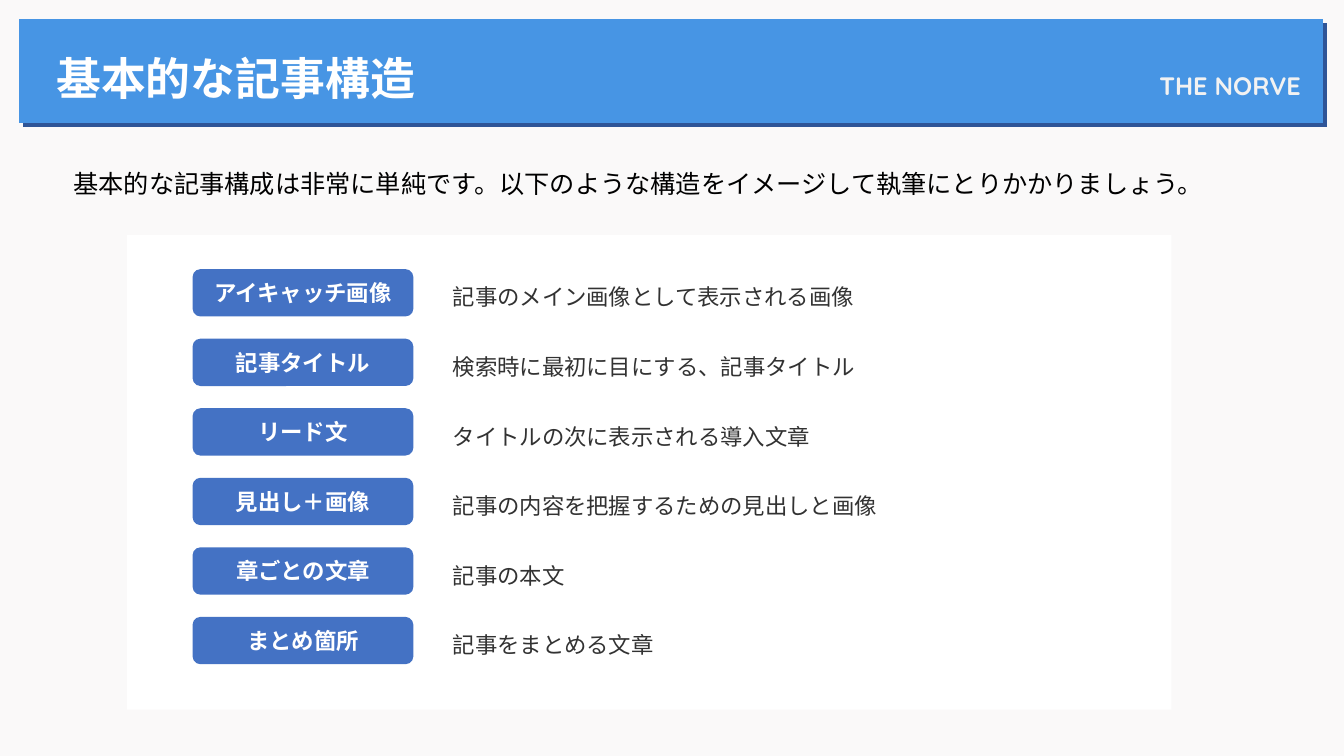
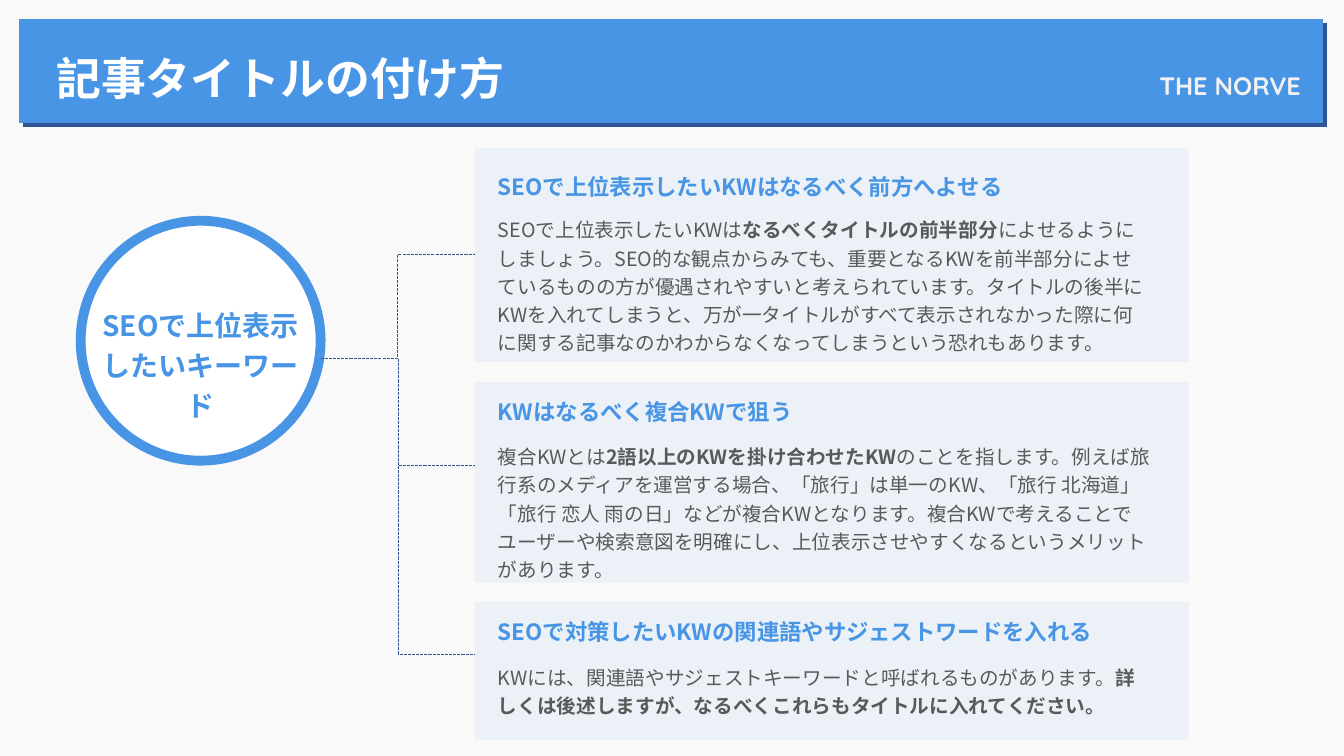
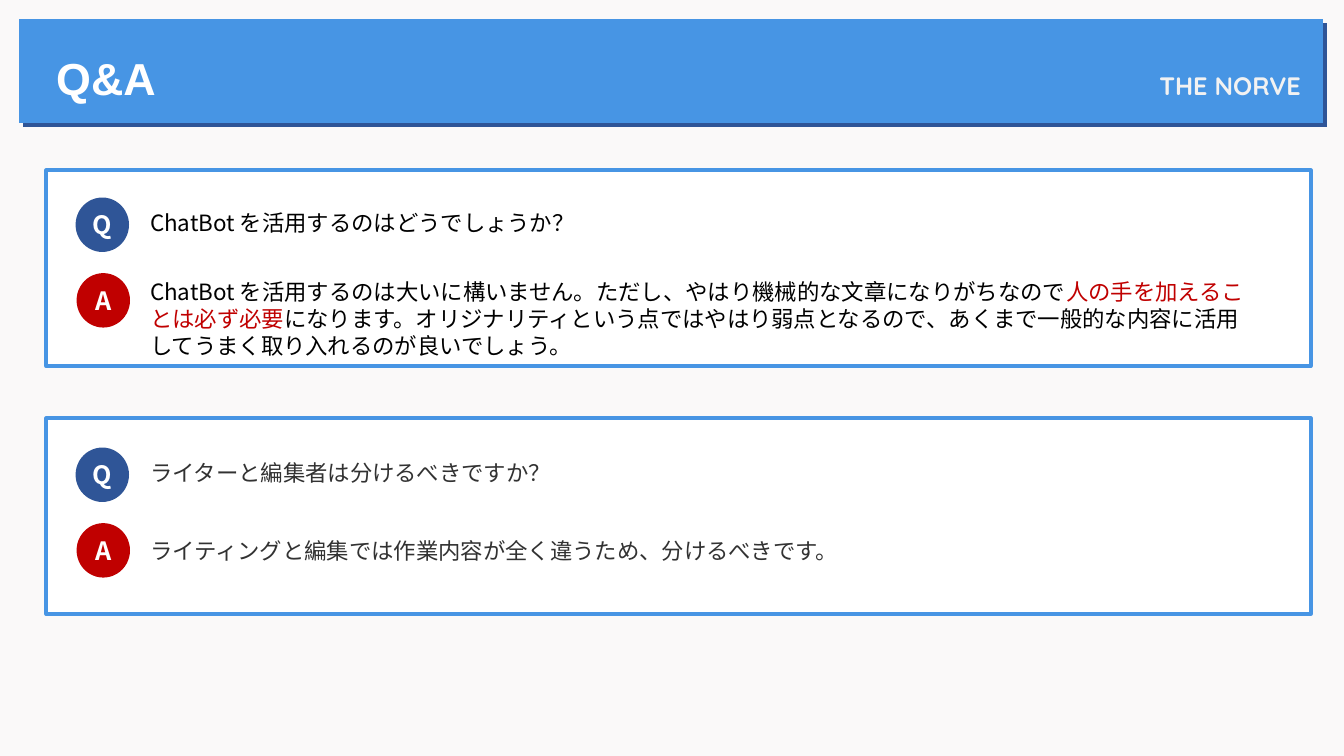
from lxml.etree import SubElement
from pptx import Presentation
from pptx.dml.color import RGBColor
from pptx.enum.dml import MSO_LINE
from pptx.enum.shapes import MSO_CONNECTOR, MSO_SHAPE
from pptx.enum.text import MSO_ANCHOR, MSO_AUTO_SIZE, PP_ALIGN
from pptx.oxml.ns import qn
from pptx.util import Pt

PX = 9144  # 100 px to the inch
FONT = "Noto Sans CJK JP"
BACKGROUND, WHITE, BLACK = "FAF9F9", "FFFFFF", "000000"
BLUE, NAVY, LABEL_BLUE, PALE_BLUE = "4795E4", "2F5597", "4472C4", "DEEBF7"
RED, DARK, GREY, LIGHT = "C00000", "323232", "595959", "F2F2F2"
BRAND = "THE NORVE"


def px(n):
    return int(n * PX)


def rgb(color):
    return RGBColor.from_string(color)


def write(sp, content, size=16, color=BLACK, bold=False, font=FONT,
          align=PP_ALIGN.LEFT, anchor=MSO_ANCHOR.TOP, spacing=None,
          inset=None, wrap=True):
    """Content is a string or a list of (text, overrides of color and bold)."""
    tf = sp.text_frame
    tf.word_wrap = wrap
    tf.vertical_anchor = anchor
    if inset is not None:
        tf.margin_left = tf.margin_right = px(inset)
        tf.margin_top = tf.margin_bottom = px(inset)
    p = tf.paragraphs[0]
    p.alignment = align
    if spacing:
        p.line_spacing = spacing
    runs = [(content, {})] if isinstance(content, str) else content
    for text, overrides in runs:
        r = p.add_run()
        r.text = text
        r.font.size = Pt(size)
        r.font.bold = overrides.get("bold", bold)
        r.font.color.rgb = rgb(overrides.get("color", color))
        r.font.name = font
        SubElement(r.font._element, qn("a:ea"), typeface=FONT)


def add_text(s, x, y, w, h, content, grow=True, **fmt):
    sp = s.shapes.add_textbox(px(x), px(y), px(w), px(h))
    write(sp, content, **fmt)
    if grow:
        sp.text_frame.auto_size = MSO_AUTO_SIZE.SHAPE_TO_FIT_TEXT


def add_box(s, x, y, w, h, fill, kind=MSO_SHAPE.RECTANGLE, line=None,
            line_width=0, opacity=None):
    sp = s.shapes.add_shape(kind, px(x), px(y), px(w), px(h))
    sp.shadow.inherit = False
    sp.fill.solid()
    sp.fill.fore_color.rgb = rgb(fill)
    if opacity is not None:
        clr = sp._element.spPr.find(".//" + qn("a:srgbClr"))
        SubElement(clr, qn("a:alpha"), val=str(opacity * 1000))
    if line:
        sp.line.color.rgb = rgb(line)
        sp.line.width = Pt(line_width)
    else:
        sp.line.fill.background()
    return sp


def add_label(s, x, y, w, h, text, fill, kind, size):
    sp = add_box(s, x, y, w, h, fill, kind)
    write(sp, text, size=size, color=WHITE, bold=True, inset=0, wrap=False,
          align=PP_ALIGN.CENTER, anchor=MSO_ANCHOR.MIDDLE)


def add_elbow(s, x1, y1, x2, y2, bend):
    """Dashed elbow that turns at bend percent of its width."""
    c = s.shapes.add_connector(MSO_CONNECTOR.ELBOW, px(x1), px(y1), px(x2), px(y2))
    c.line.color.rgb = rgb(NAVY)
    c.line.width = Pt(0.75)
    c.line.dash_style = MSO_LINE.SQUARE_DOT
    spPr = c._element.spPr
    SubElement(spPr, qn("a:effectLst"))
    guides = spPr.find(".//" + qn("a:avLst"))
    SubElement(guides, qn("a:gd"), name="adj1", fmla=f"val {bend * 1000}")


def add_slide(prs, title):
    s = prs.slides.add_slide(prs.slide_layouts[6])
    add_box(s, 23, 23, 1293, 103, NAVY)
    add_box(s, 19, 19, 1293, 103, BLUE)
    add_text(s, 787, 35, 513, 70, BRAND, grow=False, size=18, color=LIGHT,
             bold=True, font="Quicksand", align=PP_ALIGN.RIGHT,
             anchor=MSO_ANCHOR.BOTTOM, spacing=0.9)
    add_text(s, 46, 45, 596, 64, title, size=32, color=WHITE, bold=True, font="Arial")
    return s


def add_card(s, top, height, heading_top, body_top, heading, body):
    add_box(s, 471, top, 708, height, PALE_BLUE, opacity=50)
    add_text(s, 484, heading_top, 667, 37, heading, color=BLUE, bold=True)
    add_text(s, 484, body_top, 667, 63, body, size=14, color=GREY, spacing=1.2)


def add_qa(s, top, badge_top, answer_top, question, answer, color):
    add_box(s, 46, top, 1254, 194, WHITE, line=BLUE, line_width=3)
    add_label(s, 75, badge_top, 53, 54, "Q", NAVY, MSO_SHAPE.OVAL, 18)
    add_label(s, 76, badge_top + 75, 53, 54, "A", RED, MSO_SHAPE.OVAL, 18)
    add_text(s, 139, badge_top + 7, 667, 37, question, color=color)
    add_text(s, 139, answer_top, 1115, 37, answer, color=color)


def structure_slide(prs):
    s = add_slide(prs, "基本的な記事構造")
    add_text(s, 63, 162, 1128, 40,
             "基本的な記事構成は非常に単純です。以下のような構造をイメージして執筆にとりかかりましょう。",
             size=18)
    add_box(s, 126, 233, 1036, 471, WHITE)
    parts = [
        ("アイキャッチ画像", "記事のメイン画像として表示される画像"),
        ("記事タイトル", "検索時に最初に目にする、記事タイトル"),
        ("リード文", "タイトルの次に表示される導入文章"),
        ("見出し＋画像", "記事の内容を把握するための見出しと画像"),
        ("章ごとの文章", "記事の本文"),
        ("まとめ箇所", "記事をまとめる文章"),
    ]
    for i, (name, description) in enumerate(parts):
        y = 267 + 69 * i
        add_label(s, 191, y, 219, 47, name, LABEL_BLUE, MSO_SHAPE.ROUNDED_RECTANGLE, 16)
        add_text(s, 449, y + 9, 759, 29, description, color=DARK, spacing=1.2, inset=0)


def title_slide(prs):
    s = add_slide(prs, "記事タイトルの付け方")
    add_box(s, 80, 219, 238, 238, WHITE, MSO_SHAPE.OVAL, line=BLUE, line_width=7)
    add_text(s, 85, 294, 228, 86, "SEOで上位表示したいキーワード", size=20,
             color=BLUE, bold=True, align=PP_ALIGN.CENTER, spacing=1.2)
    strong = {"bold": True}
    add_card(s, 147, 212, 167, 207, "SEOで上位表示したいKWはなるべく前方へよせる", [
        ("SEOで上位表示したいKWは", {}),
        ("なるべくタイトルの前半部分", strong),
        ("によせるようにしましょう。SEO的な観点からみても、重要となるKWを前半部分に"
         "よせているものの方が優遇されやすいと考えられています。タイトルの後半にKWを"
         "入れてしまうと、万が一タイトルがすべて表示されなかった際に何に関する記事なのか"
         "わからなくなってしまうという恐れもあります。", {}),
    ])
    add_card(s, 379, 199, 390, 432, "KWはなるべく複合KWで狙う", [
        ("複合KWとは", {}),
        ("2語以上のKWを掛け合わせたKW", strong),
        ("のことを指します。例えば旅行系のメディアを運営する場合、「旅行」は単一のKW、"
         "「旅行 北海道」「旅行 恋人 雨の日」などが複合KWとなります。複合KWで考える"
         "ことでユーザーや検索意図を明確にし、上位表示させやすくなるというメリットが"
         "あります。", {}),
    ])
    add_card(s, 597, 137, 608, 651, "SEOで対策したいKWの関連語やサジェストワードを入れる", [
        ("KWには、関連語やサジェストキーワードと呼ばれるものがあります。", {}),
        ("詳しくは後述しますが、なるべくこれらもタイトルに入れてください。", strong),
    ])
    add_elbow(s, 318, 356, 471, 253, 50)
    for y1, y2 in [(356, 462), (462, 649)]:
        add_elbow(s, 395, y1, 471, y2, 0)


def qa_slide(prs):
    s = add_slide(prs, "Q&A")
    add_qa(s, 169, 196, 271, "ChatBot を活用するのはどうでしょうか？", [
        ("ChatBot を活用するのは大いに構いません。ただし、やはり機械的な文章に"
         "なりがちなので", {}),
        ("人の手を加えることは必ず必要", {"color": RED}),
        ("になります。オリジナリティという点ではやはり弱点となるので、あくまで一般的な"
         "内容に活用してうまく取り入れるのが良いでしょう。", {}),
    ], BLACK)
    add_qa(s, 415, 444, 528, "ライターと編集者は分けるべきですか？",
           "ライティングと編集では作業内容が全く違うため、分けるべきです。", DARK)


def main():
    prs = Presentation()
    prs.slide_width, prs.slide_height = px(1333), px(750)
    fill = prs.slide_master.background.fill
    fill.solid()
    fill.fore_color.rgb = rgb(BACKGROUND)
    structure_slide(prs)
    title_slide(prs)
    qa_slide(prs)
    prs.save("out.pptx")


if __name__ == "__main__":
    main()
